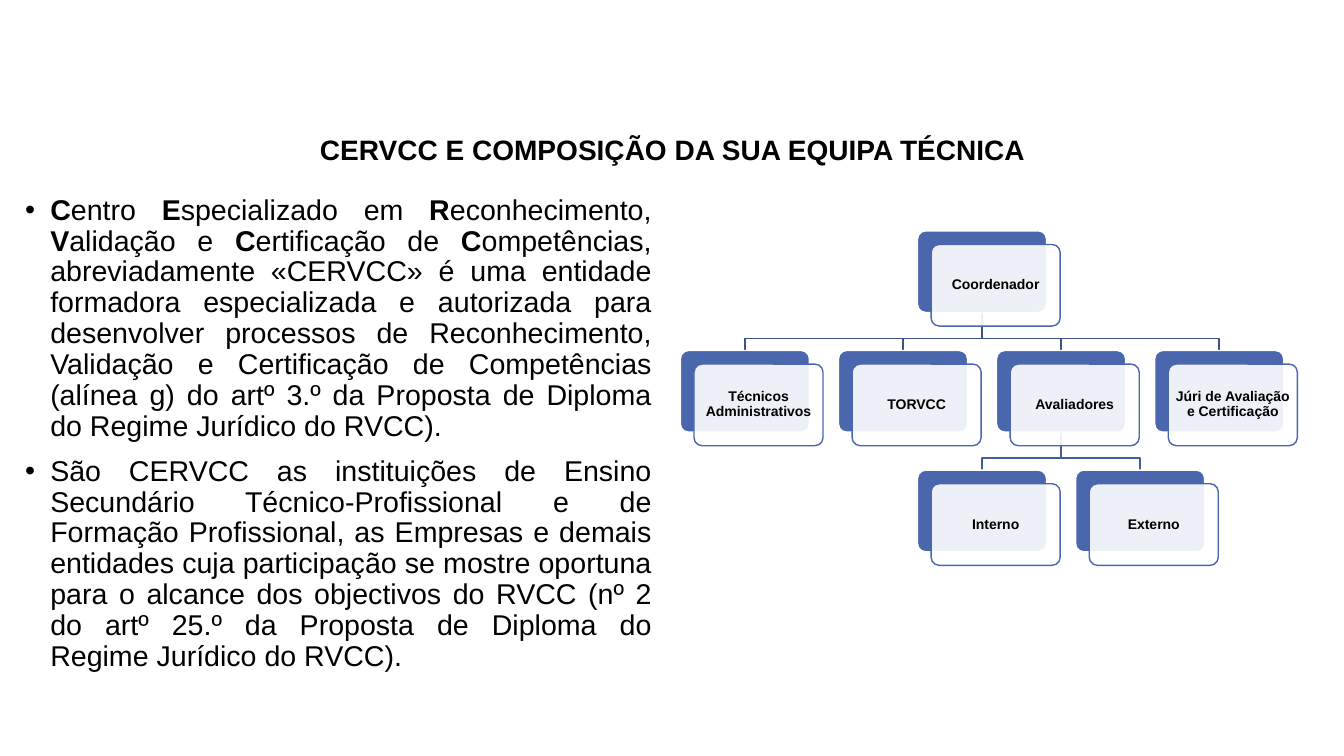
from lxml import etree
from pptx import Presentation
from pptx.dml.color import RGBColor
from pptx.enum import shapes, text
from pptx.oxml.ns import qn
from pptx.util import Inches, Pt

COLORS = {
    "blue": "4A66AC",
    "upper_link": "3B528A",
    "lower_link": "435D9C",
    "white": "FFFFFF",
    "black": "000000",
}
rgb = {name: RGBColor.from_string(value) for name, value in COLORS.items()}

TITLE = "CERVCC E COMPOSIÇÃO DA SUA EQUIPA TÉCNICA"
# Asterisks switch bold on and off.
BULLETS = [
    "*C*entro *E*specializado em *R*econhecimento, *V*alidação e *C*ertificação de "
    "*C*ompetências, abreviadamente «CERVCC» é uma entidade formadora especializada e "
    "autorizada para desenvolver processos de Reconhecimento, Validação e Certificação de "
    "Competências (alínea g) do artº 3.º da Proposta de Diploma do Regime Jurídico do RVCC).",
    "São CERVCC as instituições de Ensino Secundário Técnico-Profissional e de Formação "
    "Profissional, as Empresas e demais entidades cuja participação se mostre oportuna para "
    "o alcance dos objectivos do RVCC (nº 2 do artº 25.º da Proposta de Diploma do Regime "
    "Jurídico do RVCC).",
]

# Name: (half-columns from the chart centre, level, parent)
TEAM = {
    "Coordenador": (0, 0, None),
    "Técnicos Administrativos": (-3, 1, "Coordenador"),
    "TORVCC": (-1, 1, "Coordenador"),
    "Avaliadores": (1, 1, "Coordenador"),
    "Júri de Avaliação e Certificação": (3, 1, "Coordenador"),
    "Interno": (0, 2, "Avaliadores"),
    "Externo": (2, 2, "Avaliadores"),
}
CENTRE_X, TOP_Y = Inches(9.74), Inches(2.29)
HALF_COLUMN, LEVEL_STEP = Inches(0.784), Inches(1.187)
CARD_W, CARD_H = Inches(1.28), Inches(0.81)
OFFSET, ELBOW = Inches(0.135), Inches(0.12)


def style_run(r, size, bold):
    r.font.name = "Arial"
    r.font.size = Pt(size)
    r.font.bold = bold
    r.font.color.rgb = rgb["black"]


def add_card(x, y, fill, line):
    card = s.shapes.add_shape(shapes.MSO_SHAPE.ROUNDED_RECTANGLE, x, y, CARD_W, CARD_H)
    card.adjustments[0] = 0.1
    card.shadow.inherit = False
    card.fill.solid()
    card.fill.fore_color.rgb = rgb[fill]
    card.line.color.rgb = rgb[line]
    card.line.width = Pt(1)
    return card


prs = Presentation()
prs.slide_width, prs.slide_height = Inches(13.33), Inches(7.5)
s = prs.slides.add_slide(prs.slide_layouts[6])

# Title
tf = s.shapes.add_textbox(Inches(0.92), Inches(1.15), Inches(11.5), Inches(0.71)).text_frame
tf.word_wrap = True
tf.vertical_anchor = text.MSO_ANCHOR.MIDDLE
tf.text = TITLE
p = tf.paragraphs[0]
p.alignment = text.PP_ALIGN.CENTER
p.line_spacing = 0.9
style_run(p.runs[0], 20, True)

# Bulleted text
tf = s.shapes.add_textbox(Inches(0.15), Inches(1.89), Inches(6.41), Inches(4.88)).text_frame
tf.word_wrap = True
for i, bullet in enumerate(BULLETS):
    p = tf.add_paragraph() if i else tf.paragraphs[0]
    p.alignment = text.PP_ALIGN.JUSTIFY
    p.line_spacing = 0.9
    if i:
        p.space_before = Pt(10)
    pPr = p._p.get_or_add_pPr()
    pPr.set("marL", str(Inches(0.25)))
    pPr.set("indent", str(-Inches(0.25)))
    etree.SubElement(pPr, qn("a:buFont")).set("typeface", "Arial")
    etree.SubElement(pPr, qn("a:buChar")).set("char", "•")
    for j, part in enumerate(bullet.split("*")):
        if part:
            r = p.add_run()
            r.text = part
            style_run(r, 20.4, j % 2 == 1)

# Organisation chart: links behind, cards in front
position = {
    name: (CENTRE_X + column * HALF_COLUMN, TOP_Y + level * LEVEL_STEP)
    for name, (column, level, parent) in TEAM.items()
}
for name, (column, level, parent) in TEAM.items():
    if parent is None:
        continue
    x, y = position[name]
    parent_x, parent_y = position[parent]
    builder = s.shapes.build_freeform(parent_x, parent_y + CARD_H)
    builder.add_line_segments([(parent_x, y - ELBOW), (x, y - ELBOW), (x, y)], close=False)
    link = builder.convert_to_shape()
    link.shadow.inherit = False
    link.fill.background()
    link.line.color.rgb = rgb["upper_link" if level == 1 else "lower_link"]
    link.line.width = Pt(1)

for name, (x, y) in position.items():
    left = x - CARD_W // 2
    add_card(left, y, "blue", "white")
    front = add_card(left + OFFSET, y + OFFSET, "white", "blue")
    white = front.fill._xPr.find(qn("a:solidFill"))[0]
    etree.SubElement(white, qn("a:alpha")).set("val", "90000")
    tf = front.text_frame
    tf.word_wrap = True
    tf.vertical_anchor = text.MSO_ANCHOR.MIDDLE
    tf.margin_left = tf.margin_right = tf.margin_top = tf.margin_bottom = Inches(0.04)
    tf.text = name
    p = tf.paragraphs[0]
    p.alignment = text.PP_ALIGN.CENTER
    p.line_spacing = 0.9
    style_run(p.runs[0], 10, True)

prs.save("out.pptx")
